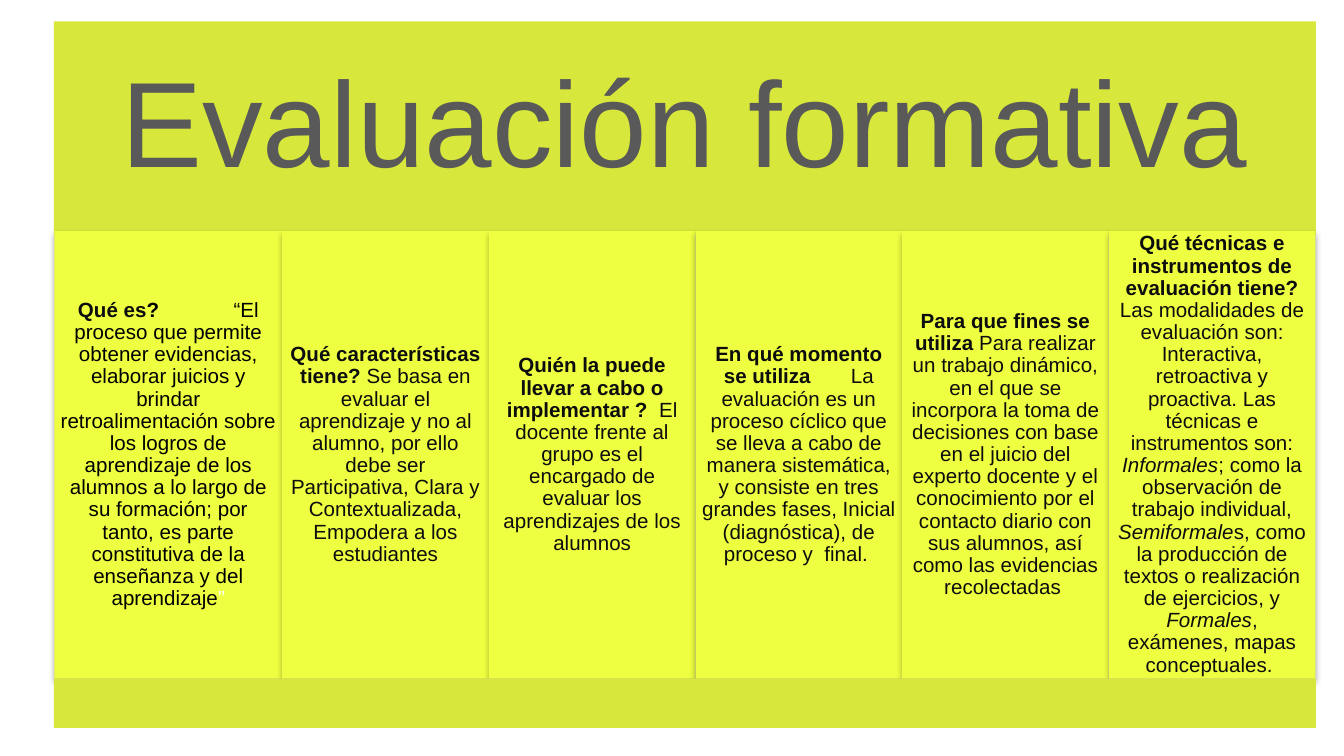
from dataclasses import dataclass

from lxml.etree import SubElement
from pptx import Presentation
from pptx.dml.color import RGBColor
from pptx.enum.shapes import MSO_SHAPE
from pptx.enum.text import MSO_ANCHOR, MSO_AUTO_SIZE, PP_ALIGN
from pptx.oxml.ns import qn
from pptx.util import Pt


@dataclass(frozen=True)
class Theme:
    font: str = "Arial"
    title_size: float = 65
    body_size: float = 11
    band: str = "D8E73B"
    panel: str = "EEFF41"
    title: str = "595959"
    body: str = "0D0D0D"
    black: str = "000000"
    white: str = "FFFFFF"


@dataclass(frozen=True)
class Span:
    text: str
    bold: bool = False
    italic: bool = False
    color: str = ""
    tracking: float = 0  # points added after each character


@dataclass(frozen=True)
class Box:
    left: float
    top: float
    width: float
    height: float


THEME = Theme()
LEFT, WIDTH = 28.8, 676.2
TITLE_BOX = Box(LEFT, 11.5, WIDTH, 114.5)
FOOTER_BOX = Box(LEFT, 363.6, WIDTH, 26.4)
PANEL_TOP, PANEL_HEIGHT = 123.8, 239.8
FIRST_WIDTH, PANEL_WIDTH = 122, 110.7

PANELS = [
    [
        Span("Qué es", bold=True),
        Span("?", bold=True, color=THEME.black),
        Span(" ", bold=True, tracking=36.7),
        Span("“El proceso que permite obtener evidencias, elaborar juicios y brindar "
             "retroalimentación sobre los logros de aprendizaje de los alumnos a lo largo "
             "de su formación; por tanto, es parte constitutiva de la enseñanza y del "
             "aprendizaje", color=THEME.black),
        Span("”", color=THEME.white),
    ],
    [
        Span("Qué características tiene? ", bold=True),
        Span("Se basa en evaluar el aprendizaje y no al alumno, por ello debe ser "
             "Participativa, Clara y Contextualizada, Empodera a los estudiantes"),
    ],
    [
        Span("Quién la puede llevar a cabo o implementar ?  ", bold=True),
        Span("El docente frente al grupo es el encargado de evaluar los aprendizajes "
             "de los alumnos"),
    ],
    [
        Span("En qué momento se utiliza", bold=True),
        Span(" ", bold=True, tracking=18.4),
        Span("La evaluación es un proceso cíclico que se lleva a cabo de manera "
             "sistemática, y consiste en tres grandes fases, Inicial (diagnóstica), "
             "de proceso y  final. "),
    ],
    [
        Span("Para que fines se utiliza ", bold=True),
        Span("Para realizar un trabajo dinámico, en el que se incorpora la toma de "
             "decisiones con base en el juicio del experto docente y el conocimiento por "
             "el contacto diario con sus alumnos, así como las evidencias recolectadas "),
    ],
    [
        Span("Qué técnicas e instrumentos de evaluación tiene? ", bold=True),
        Span("Las modalidades de evaluación son: Interactiva, retroactiva y proactiva. "
             "Las técnicas e instrumentos son: "),
        Span("Informales", italic=True),
        Span("; como la observación de trabajo individual, "),
        Span("Semiformale", italic=True),
        Span("s, como la producción de textos o realización de ejercicios, y "),
        Span("Formales", italic=True),
        Span(", exámenes, mapas conceptuales. "),
    ],
]


def set_attrs(obj, values: dict) -> None:
    for name, value in values.items():
        setattr(obj, name, value)


def place(sp, box: Box, color: str) -> None:
    set_attrs(sp, {"left": Pt(box.left), "top": Pt(box.top),
                   "width": Pt(box.width), "height": Pt(box.height)})
    sp.fill.solid()
    sp.fill.fore_color.rgb = RGBColor.from_string(color)
    sp.line.fill.background()


def add_rect(slide, box: Box, color: str):
    sp = slide.shapes.add_shape(MSO_SHAPE.RECTANGLE, 0, 0, 0, 0)
    place(sp, box, color)
    sp.shadow.inherit = False
    return sp


def add_shadow(sp) -> None:
    effects = sp._element.spPr.find(qn("a:effectLst"))
    shadow = SubElement(effects, qn("a:outerShdw"), blurRad=str(Pt(3.1)),
                        dist=str(Pt(1.8)), dir="5400000", rotWithShape="0")
    color = SubElement(shadow, qn("a:srgbClr"), val=THEME.black)
    SubElement(color, qn("a:alpha"), val="35000")


def write(sp, spans: list[Span], size: float, color: str, inset: float) -> None:
    """Fill a shape with one centred paragraph of formatted spans."""
    tf = sp.text_frame
    margins = {f"margin_{side}": Pt(inset) for side in ("left", "top", "right", "bottom")}
    set_attrs(tf, {"word_wrap": True, "auto_size": MSO_AUTO_SIZE.NONE,
                   "vertical_anchor": MSO_ANCHOR.MIDDLE, **margins})
    p = tf.paragraphs[0]
    set_attrs(p, {"alignment": PP_ALIGN.CENTER, "line_spacing": 0.9,
                  "space_before": Pt(0)})
    for span in spans:
        r = p.add_run()
        r.text = span.text
        set_attrs(r.font, {"name": THEME.font, "size": Pt(size),
                           "bold": span.bold, "italic": span.italic})
        r.font.color.rgb = RGBColor.from_string(span.color or color)
        if span.tracking:
            r.font._element.set("spc", str(round(span.tracking * 100)))


def main() -> None:
    prs = Presentation()
    set_attrs(prs, {"slide_width": Pt(720), "slide_height": Pt(405)})
    slide = prs.slides.add_slide(prs.slide_layouts[5])

    title = slide.shapes.title
    place(title, TITLE_BOX, THEME.band)
    write(title, [Span("Evaluación formativa")], THEME.title_size, THEME.title, 19.4)

    left = LEFT + 0.4
    for i, spans in enumerate(PANELS):
        width = PANEL_WIDTH if i else FIRST_WIDTH
        sp = add_rect(slide, Box(left, PANEL_TOP, width, PANEL_HEIGHT), THEME.panel)
        add_shadow(sp)
        write(sp, spans, THEME.body_size, THEME.body, 3.3)
        left += width

    add_rect(slide, FOOTER_BOX, THEME.band)
    prs.save("out.pptx")


if __name__ == "__main__":
    main()
